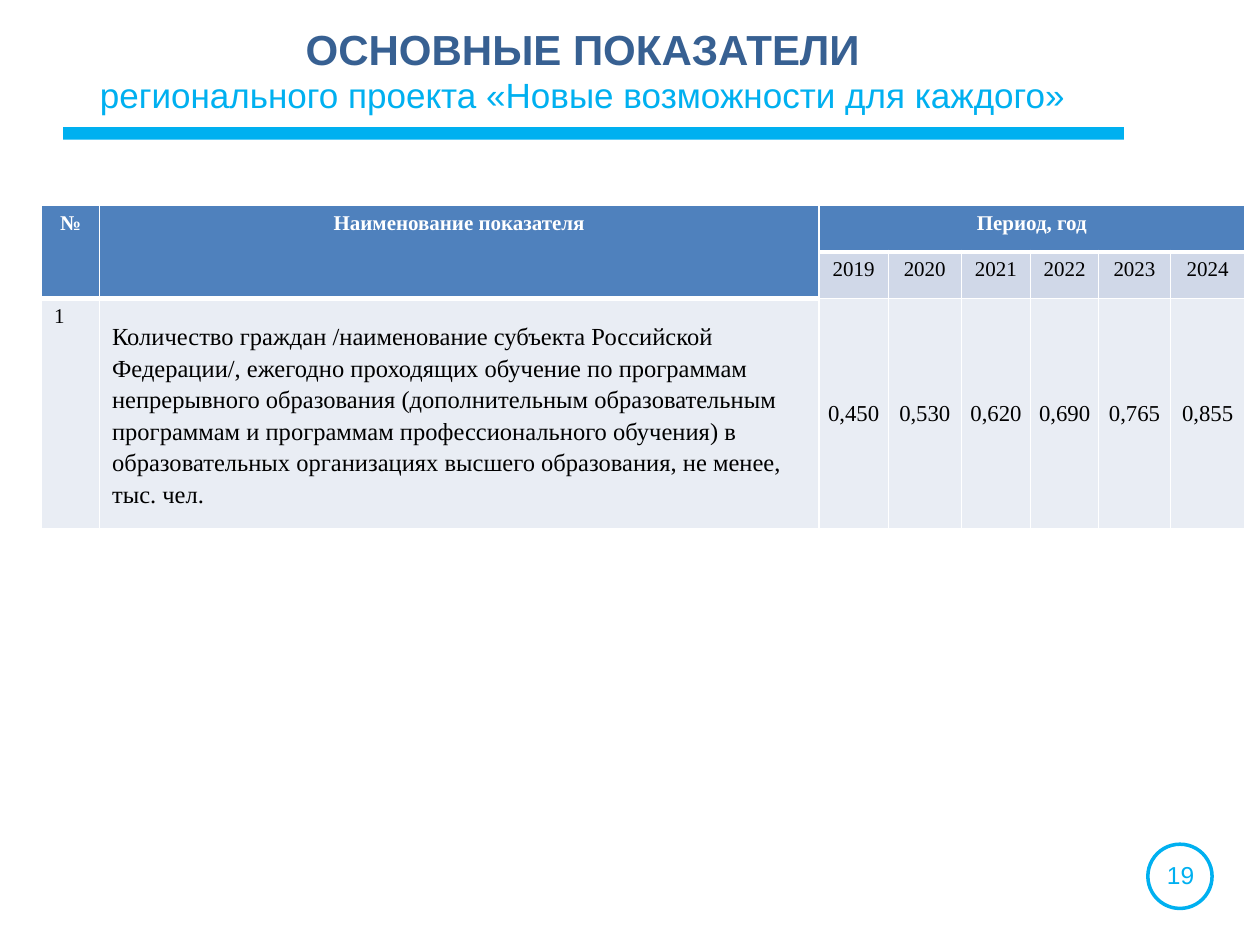
from dataclasses import dataclass

from lxml.etree import SubElement
from pptx import Presentation
from pptx.dml.color import RGBColor
from pptx.enum.shapes import MSO_SHAPE
from pptx.enum.text import MSO_ANCHOR, PP_ALIGN
from pptx.oxml.ns import qn
from pptx.util import Inches, Pt


@dataclass(frozen=True)
class Theme:
    heading_font: str = "Arial"
    table_font: str = "Times New Roman"
    accent: str = "00B0F0"
    title: str = "376092"
    header: str = "4F81BD"
    years: str = "D0D8E8"
    body: str = "E9EDF4"
    white: str = "FFFFFF"
    black: str = "000000"
    title_size: int = 24
    subtitle_size: int = 20
    text_size: int = 14
    value_size: int = 13
    label_size: int = 12
    thin: int = 1
    thick: int = 3


def grid(*units):
    """Turn grid units into lengths; the slide is 100 columns by 75 rows."""
    return [int(unit * CELL) for unit in units]


def write(paragraph, text, font_name, size, color, bold=False, align=PP_ALIGN.CENTER):
    paragraph.alignment = align
    run = paragraph.add_run()
    run.text = text
    run.font.name = font_name
    run.font.size = Pt(size)
    run.font.bold = bold
    run.font.color.rgb = RGBColor.from_string(color)


theme = Theme()
presentation = Presentation()
presentation.slide_width = Inches(10)
presentation.slide_height = Inches(7.5)
CELL = presentation.slide_width / 100
slide = presentation.slides.add_slide(presentation.slide_layouts[6])
accent = RGBColor.from_string(theme.accent)

# Title rule and page number ring
rule = slide.shapes.add_shape(MSO_SHAPE.RECTANGLE, *grid(5, 10.1, 84.2, 1))
rule.shadow.inherit = False
rule.fill.solid()
rule.fill.fore_color.rgb = accent
rule.line.fill.background()

ring = slide.shapes.add_shape(MSO_SHAPE.OVAL, *grid(91.1, 67, 5.1, 5.1))
ring.shadow.inherit = False
ring.fill.background()
ring.line.color.rgb = accent
ring.line.width = Pt(2)

# Page number and title
text_boxes = [
    ((90.8, 67.7, 5.8, 3.4), [("19", theme.text_size, theme.accent, False)]),
    ((5.7, 1.3, 81.1, 8.4), [
        ("ОСНОВНЫЕ ПОКАЗАТЕЛИ", theme.title_size, theme.title, True),
        ("регионального проекта «Новые возможности для каждого»",
         theme.subtitle_size, theme.accent, False),
    ]),
]
for place, lines in text_boxes:
    frame = slide.shapes.add_textbox(*grid(*place)).text_frame
    frame.word_wrap = True
    frame.vertical_anchor = MSO_ANCHOR.MIDDLE
    for index, (text, size, color, bold) in enumerate(lines):
        paragraph = frame.add_paragraph() if index else frame.paragraphs[0]
        write(paragraph, text, theme.heading_font, size, color, bold)

# Indicator table
column_widths = grid(4.6, 57.1, 5.5, 5.8, 5.5, 5.4, 5.7, 5.9)
row_heights = grid(3.7, 3.7, 18.3)
table = slide.shapes.add_table(
    len(row_heights), len(column_widths),
    *grid(3.3, 16.3), sum(column_widths), sum(row_heights)).table
for column, width in zip(table.columns, column_widths):
    column.width = width
for row, height in zip(table.rows, row_heights):
    row.height = height

for row_index, row in enumerate(table.rows):
    for column_index, cell in enumerate(row.cells):
        # The thick edge runs under the header, which is two rows deep on the left
        header_rows = 2 if column_index < 2 else 1
        edges = {
            "lnL": theme.thin,
            "lnR": theme.thin,
            "lnT": theme.thick if row_index == header_rows else theme.thin,
            "lnB": theme.thick if row_index == header_rows - 1 else theme.thin,
        }
        properties = cell._tc.get_or_add_tcPr()
        for edge, width in edges.items():
            line = SubElement(properties, qn(f"a:{edge}"), w=str(Pt(width)))
            SubElement(SubElement(line, qn("a:solidFill")), qn("a:srgbClr"), val=theme.white)
        if row_index < header_rows:
            fill = theme.header
        else:
            fill = theme.years if row_index == 1 else theme.body
        cell.fill.solid()
        cell.fill.fore_color.rgb = RGBColor.from_string(fill)

table.cell(0, 0).merge(table.cell(1, 0))
table.cell(0, 1).merge(table.cell(1, 1))
table.cell(0, 2).merge(table.cell(0, 7))

for column_index, text in enumerate(["№", "Наименование показателя", "Период, год"]):
    write(table.cell(0, column_index).text_frame.paragraphs[0], text,
          theme.table_font, theme.label_size, theme.white, bold=True)

write(table.cell(2, 0).text_frame.paragraphs[0], "1",
      theme.table_font, theme.label_size, theme.black, align=PP_ALIGN.LEFT)

indicator = table.cell(2, 1)
indicator.vertical_anchor = MSO_ANCHOR.MIDDLE
indicator.margin_left, indicator.margin_right = grid(0.2, 0.2)
indicator.margin_top = indicator.margin_bottom = 0
paragraph = indicator.text_frame.paragraphs[0]
paragraph.line_spacing = Pt(18)
paragraph._p.get_or_add_pPr().set("marL", str(grid(0.8)[0]))
write(paragraph,
      "Количество граждан /наименование субъекта Российской Федерации/, ежегодно "
      "проходящих обучение по программам непрерывного образования (дополнительным "
      "образовательным программам и программам профессионального обучения) в "
      "образовательных организациях высшего образования, не менее, тыс. чел.",
      theme.table_font, theme.text_size, theme.black, align=PP_ALIGN.LEFT)

values = ["0,450", "0,530", "0,620", "0,690", "0,765", "0,855"]
for offset, value in enumerate(values):
    write(table.cell(1, 2 + offset).text_frame.paragraphs[0], str(2019 + offset),
          theme.table_font, theme.label_size, theme.black)
    cell = table.cell(2, 2 + offset)
    cell.vertical_anchor = MSO_ANCHOR.MIDDLE
    cell.margin_left = cell.margin_right = cell.margin_top = cell.margin_bottom = 0
    write(cell.text_frame.paragraphs[0], value,
          theme.table_font, theme.value_size, theme.black)

presentation.save("out.pptx")
